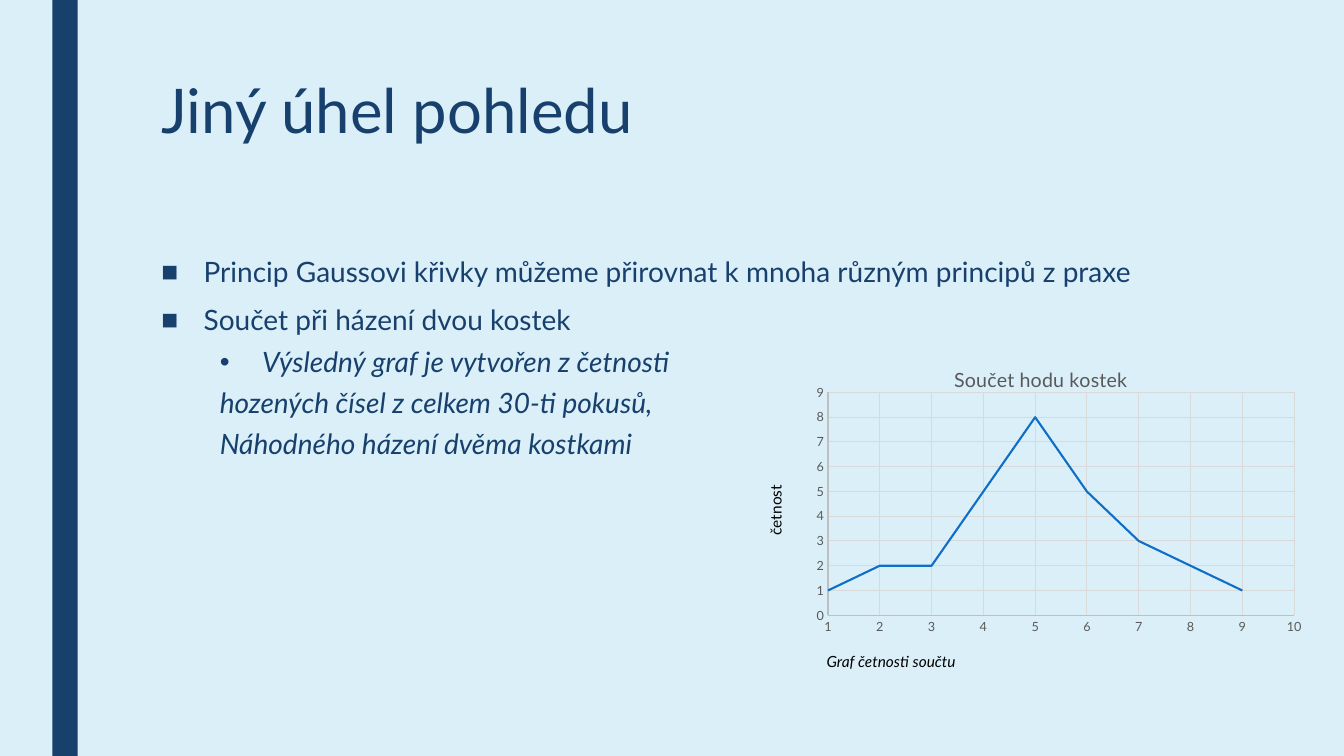
from lxml import etree
from pptx import Presentation
from pptx import util as u
from pptx.chart.data import XyChartData
from pptx.dml.color import RGBColor
from pptx.enum import chart as ch, shapes, text
from pptx.oxml import ns, parse_xml

COLORS = {"background": "DBEFF9", "navy": "17406D", "curve": "0F6FC6",
          "grid": "D9D9D9", "axis": "BFBFBF", "label": "595959", "black": "000000"}


def color(name):
    return RGBColor.from_string(COLORS[name])


def style(font, name, **values):
    font.color.rgb = color(name)
    for key, value in {"name": "Lato", "bold": False, **values}.items():
        setattr(font, key, value)


prs = Presentation()
prs.slide_width, prs.slide_height = u.Inches(13.33), u.Inches(7.5)
slide = prs.slides.add_slide(prs.slide_layouts[1])
slide.background.fill.solid()
slide.background.fill.fore_color.rgb = color("background")

# Side stripe
stripe = slide.shapes.add_shape(shapes.MSO_SHAPE.RECTANGLE, u.Inches(0.52), 0,
                                u.Inches(0.25), prs.slide_height)
stripe.shadow.inherit = False
stripe.fill.solid()
stripe.fill.fore_color.rgb = color("navy")
stripe.line.fill.background()

# Heading and list placeholders
heading, points = slide.placeholders
for holder, top, height in ((heading, 0.75, 1.62), (points, 2.5, 3.92)):
    holder.left, holder.top = u.Inches(1.5), u.Inches(top)
    holder.width, holder.height = u.Inches(10.5), u.Inches(height)
    frame_format = {"vertical_anchor": text.MSO_ANCHOR.TOP, "word_wrap": True,
                    "auto_size": text.MSO_AUTO_SIZE.NONE}
    for key, value in frame_format.items():
        setattr(holder.text_frame, key, value)

heading.text_frame.text = "Jiný úhel pohledu"
heading_line = heading.text_frame.paragraphs[0]
heading_line.alignment = text.PP_ALIGN.LEFT
heading_line.line_spacing = 0.89
style(heading_line.runs[0].font, "navy", size=u.Pt(44))

# List: level, bullet, left margin, first-line indent, wording
ITEMS = [
    (0, "■", 0.42, -0.42,
     "Princip Gaussovi křivky můžeme přirovnat k mnoha různým principů z praxe"),
    (0, "■", 0.42, -0.42, "Součet při házení dvou kostek"),
    (1, "•", 1, -0.42, "Výsledný graf je vytvořen z četnosti"),
    (1, None, 0.58, 0, "hozených čísel z celkem 30-ti pokusů,"),
    (1, None, 0.58, 0, "Náhodného házení dvěma kostkami"),
]
points.text_frame.text = "\n".join(item[-1] for item in ITEMS)
for point, (level, bullet, margin, indent, _) in zip(points.text_frame.paragraphs, ITEMS):
    point_format = {"level": level, "alignment": text.PP_ALIGN.LEFT, "line_spacing": 0.94,
                    "space_before": u.Pt(5 if level else 10), "space_after": u.Pt(2)}
    for key, value in point_format.items():
        setattr(point, key, value)
    style(point.runs[0].font, "navy", size=u.Pt(20), italic=level == 1)
    props = point._p.get_or_add_pPr()
    props.set("marL", str(u.Inches(margin)))
    props.set("indent", str(u.Inches(indent)))
    if bullet:
        etree.SubElement(props, ns.qn("a:buFont")).set("typeface", "Arial")
        etree.SubElement(props, ns.qn("a:buChar")).set("char", bullet)
    else:
        etree.SubElement(props, ns.qn("a:buNone"))

# Frequency curve
dice_data = XyChartData()
sums = dice_data.add_series("Series 1")
for x, frequency in enumerate([1, 2, 2, 5, 8, 5, 3, 2, 1], start=1):
    sums.add_data_point(x, frequency)
dice_chart = slide.shapes.add_chart(
    ch.XL_CHART_TYPE.XY_SCATTER_SMOOTH_NO_MARKERS, u.Inches(7.44), u.Inches(3.42),
    u.Inches(5.68), u.Inches(3.27), dice_data).chart
style(dice_chart.font, "black", size=u.Pt(10))
dice_chart.has_legend = False
dice_chart.plots[0].vary_by_categories = False
curve = dice_chart.plots[0].series[0]
curve.smooth = True
curve.marker.style = ch.XL_MARKER_STYLE.NONE
curve.format.line.color.rgb = color("curve")
curve.format.line.width = u.Pt(1.5)

dice_chart.has_title = True
chart_title = dice_chart.chart_title
chart_title.text_frame.text = "Součet hodu kostek"
style(chart_title.text_frame.paragraphs[0].runs[0].font, "label", size=u.Pt(14))

for axis, low, high in ((dice_chart.category_axis, 1, 10), (dice_chart.value_axis, 0, 9)):
    axis_format = {"minimum_scale": low, "maximum_scale": high, "major_unit": 1,
                   "major_tick_mark": ch.XL_TICK_MARK.NONE,
                   "minor_tick_mark": ch.XL_TICK_MARK.NONE,
                   "has_major_gridlines": True, "has_title": False}
    for key, value in axis_format.items():
        setattr(axis, key, value)
    style(axis.tick_labels.font, "label", size=u.Pt(9))
    for line, name in ((axis.format.line, "axis"), (axis.major_gridlines.format.line, "grid")):
        line.color.rgb = color(name)
        line.width = u.Pt(0.75)

# Fixed places for plot and chart title
plot_area = dice_chart._chartSpace.chart.plotArea
title_xml = chart_title._element
PLACES = [
    (plot_area, 0, {"layoutTarget": "inner", "xMode": "edge", "yMode": "edge",
                    "x": 0.136, "y": 0.145, "w": 0.814, "h": 0.676}),
    (title_xml, 1, {"xMode": "edge", "yMode": "edge", "x": 0.35, "y": 0.05}),
]
for part, index, place in PLACES:
    for old_layout in part.findall(ns.qn("c:layout")):
        part.remove(old_layout)
    layout = etree.Element(ns.qn("c:layout"))
    manual = etree.SubElement(layout, ns.qn("c:manualLayout"))
    for key, value in place.items():
        etree.SubElement(manual, ns.qn("c:" + key)).set("val", str(value))
    part.insert(index, layout)

# Transparent chart and plot backgrounds
CLEAR = (f"<c:spPr {ns.nsdecls('c', 'a')}><a:noFill/>"
         "<a:ln><a:noFill/></a:ln></c:spPr>")
dice_chart._chartSpace.chart.addnext(parse_xml(CLEAR))
plot_area.append(parse_xml(CLEAR))

# Axis label and caption
LABELS = [
    ("četnost", (7.55, 4.71, 0.38, 0.7), False, "vert270"),
    ("Graf četnosti součtu", (8.1, 6.42, 4.37, 0.29), True, "horz"),
]
for wording, box, italic, direction in LABELS:
    label = slide.shapes.add_textbox(*map(u.Inches, box))
    label.text_frame.word_wrap = True
    label.text_frame.text = wording
    label.text_frame._txBody.bodyPr.set("vert", direction)
    style(label.text_frame.paragraphs[0].runs[0].font, "black", size=u.Pt(11), italic=italic)

prs.save("out.pptx")
